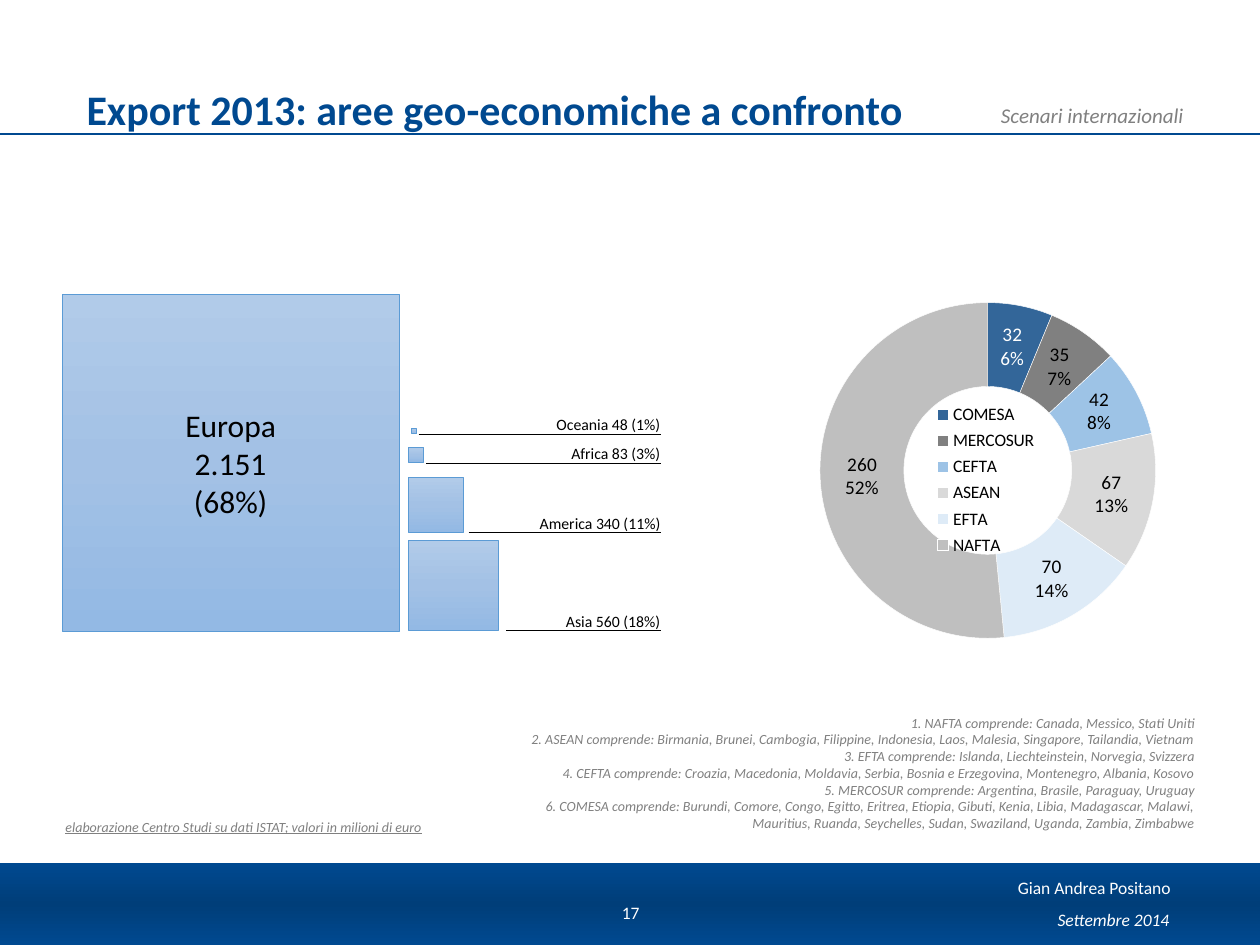
import copy

import lxml.etree
import pptx
import pptx.chart.data
import pptx.dml.color
import pptx.enum.chart
import pptx.enum.dml
import pptx.enum.shapes
import pptx.enum.text
import pptx.oxml.ns
import pptx.util

Cm = pptx.util.Cm
Pt = pptx.util.Pt
RGBColor = pptx.dml.color.RGBColor
qn = pptx.oxml.ns.qn
ALIGN = pptx.enum.text.PP_ALIGN
ANCHOR = pptx.enum.text.MSO_ANCHOR

NAVY = RGBColor(0x00, 0x49, 0x90)
DEEP_NAVY = RGBColor(0x00, 0x3E, 0x79)
GREY = RGBColor(0x80, 0x80, 0x80)
BLACK = RGBColor(0x00, 0x00, 0x00)
WHITE = RGBColor(0xFF, 0xFF, 0xFF)
EDGE_BLUE = RGBColor(0x5B, 0x9B, 0xD5)
SKY = (RGBColor(0xB1, 0xCB, 0xE9), RGBColor(0xA3, 0xC1, 0xE5), RGBColor(0x93, 0xB9, 0xE4))
FOOTER = (NAVY, DEEP_NAVY, NAVY)

ITALIC_NOTE = {"size": Pt(8), "italic": True}
LABEL_MARGINS = {"margin_left": Cm(0.25), "margin_top": Cm(0.13), "margin_right": 0, "margin_bottom": 0}

AREAS = [
    ("Oceania 48 (1%)", 8.3, 8.64, 0.1, 8.44, 8.75),
    ("Africa 83 (3%)", 8.24, 9.02, 0.3, 8.59, 9.33),
    ("America 340 (11%)", 8.24, 9.63, 1.1, 9.45, 10.73),
    ("Asia 560 (18%)", 8.24, 10.9, 1.81, 10.21, 12.71),
]
BLOCS = [
    ("COMESA", 31.5, RGBColor(0x33, 0x66, 0x99)),
    ("MERCOSUR", 34.5, GREY),
    ("CEFTA", 42.4, RGBColor(0x9D, 0xC3, 0xE6)),
    ("ASEAN", 66.5, RGBColor(0xD9, 0xD9, 0xD9)),
    ("EFTA", 69.8, RGBColor(0xDE, 0xEB, 0xF7)),
    ("NAFTA", 260.4, RGBColor(0xBF, 0xBF, 0xBF)),
]
NOTES = [
    "1. NAFTA comprende: Canada, Messico, Stati Uniti",
    "2. ASEAN comprende: Birmania, Brunei, Cambogia, Filippine, Indonesia, Laos, Malesia, Singapore, Tailandia, Vietnam",
    "3. EFTA comprende: Islanda, Liechteinstein, Norvegia, Svizzera",
    "4. CEFTA comprende: Croazia, Macedonia, Moldavia, Serbia, Bosnia e Erzegovina, Montenegro, Albania, Kosovo",
    "5. MERCOSUR comprende: Argentina, Brasile, Paraguay, Uruguay",
    "6. COMESA comprende: Burundi, Comore, Congo, Egitto, Eritrea, Etiopia, Gibuti, Kenia, Libia, Madagascar, Malawi,",
    "Mauritius, Ruanda, Seychelles, Sudan, Swaziland, Uganda, Zambia, Zimbabwe",
]


def apply(target, values):
    """Set each named attribute of the target."""
    for name, value in values.items():
        setattr(target, name, value)


def write(box, lines, color, style, align=ALIGN.LEFT, frame_format=None):
    """Fill a shape with one formatted paragraph per line."""
    frame = box.text_frame
    apply(frame, {"word_wrap": True, **(frame_format or {})})
    for index, line in enumerate(lines):
        para = frame.add_paragraph() if index else frame.paragraphs[0]
        para.alignment = align
        span = para.add_run()
        span.text = line
        apply(span.font, {"name": "Calibri", **style})
        span.font.color.rgb = color


def add_text(page, place, *text_format):
    """Add a text box at a place given in centimetres."""
    box = page.shapes.add_textbox(*map(Cm, place))
    write(box, *text_format)
    return box


def add_block(page, place, colors, angle, edge=None):
    """Add a rectangle with a three-stop gradient."""
    box = page.shapes.add_shape(pptx.enum.shapes.MSO_SHAPE.RECTANGLE, *map(Cm, place))
    box.shadow.inherit = False
    box.fill.gradient()
    box.fill.gradient_angle = angle
    stops = next(box._element.spPr.iter(qn("a:gsLst")))
    stops.insert(1, copy.deepcopy(stops[0]))
    for stop, position, color in zip(box.fill.gradient_stops, (0, 0.5, 1), colors):
        stop.position = position
        stop.color.rgb = color
    if edge is None:
        box.line.fill.background()
    else:
        box.line.color.rgb = edge
        box.line.width = Pt(0.5)
    return box


def add_rule(page, left, right, height, color, line_format):
    """Draw a horizontal line."""
    rule = page.shapes.add_connector(
        pptx.enum.shapes.MSO_CONNECTOR.STRAIGHT, Cm(left), Cm(height), Cm(right), Cm(height))
    rule.line.color.rgb = color
    apply(rule.line, line_format)
    lxml.etree.SubElement(rule._element.spPr, qn("a:effectLst"))


def set_layout(parent, index, bounds, inner=False):
    """Give a chart part a manual layout with fractional bounds."""
    for layout in parent.findall(qn("c:layout")):
        parent.remove(layout)
    layout = lxml.etree.Element(qn("c:layout"))
    manual = lxml.etree.SubElement(layout, qn("c:manualLayout"))
    entries = [("layoutTarget", "inner")] if inner else []
    entries += [("xMode", "edge"), ("yMode", "edge"), *zip("xywh", map(str, bounds))]
    for name, value in entries:
        lxml.etree.SubElement(manual, qn(f"c:{name}")).set("val", value)
    parent.insert(index, layout)


def show_percent(labels):
    """Show the percentage on a new line below the value."""
    labels.find(qn("c:showPercent")).set("val", "1")
    separator = lxml.etree.Element(qn("c:separator"))
    separator.text = "\n"
    labels.find(qn("c:showBubbleSize")).addnext(separator)


def add_doughnut(page):
    """Add the doughnut of trade blocs with its legend in the hole."""
    data = pptx.chart.data.CategoryChartData(number_format="0")
    names, values, colors = zip(*BLOCS)
    data.categories = names
    data.add_series("Series 1", values)
    kind = pptx.enum.chart.XL_CHART_TYPE.DOUGHNUT
    chart = page.shapes.add_chart(kind, *map(Cm, (15.9, 2.92, 7.87, 13.13)), data).chart
    apply(chart, {"has_title": False, "has_legend": True})
    apply(chart.font, {"name": "Calibri", "size": Pt(18)})
    chart.font.color.rgb = BLACK

    legend = chart.legend
    apply(legend, {"position": pptx.enum.chart.XL_LEGEND_POSITION.BOTTOM, "include_in_layout": False})
    legend.font.size = Pt(10)
    set_layout(legend._element, 1, (0.36, 0.39, 0.29, 0.25))

    area = next(chart._chartSpace.iter(qn("c:plotArea")))
    set_layout(area, 0, (0.08, 0.2, 0.86, 0.6), inner=True)
    next(area.iter(qn("c:holeSize"))).set("val", "71")

    plot = chart.plots[0]
    plot.vary_by_categories = True
    series = plot.series[0]
    for index, color in enumerate(colors):
        slice_format = series.points[index].format
        slice_format.fill.solid()
        slice_format.fill.fore_color.rgb = color
        slice_format.line.color.rgb = WHITE
        slice_format.line.width = Pt(0.25)

    labels = series.data_labels
    apply(labels, {"show_value": True, "number_format": "0%", "number_format_is_linked": False})
    for font, color in ((labels.font, BLACK), (series.points[0].data_label.font, WHITE)):
        apply(font, {"name": "Calibri", "size": Pt(11)})
        font.color.rgb = color
    first = labels._element.find(qn("c:dLbl"))
    first.insert(1, copy.deepcopy(labels._element.find(qn("c:numFmt"))))
    show_percent(first)
    show_percent(labels._element)


def add_frame(page):
    """Add the footer bar, header line and running texts."""
    middle = {"vertical_anchor": ANCHOR.MIDDLE}
    small = {"size": Pt(10)}
    add_block(page, (-0.48, 17.4, 26.16, 1.65), FOOTER, 90)
    add_text(page, (19.96, 18.28, 3.86, 0.53), ["Settembre 2014"], WHITE,
             {"size": Pt(10), "italic": True}, ALIGN.RIGHT, middle)
    author = add_text(page, (20.27, 17.61, 3.89, 0.79), ["Gian Andrea Positano"], WHITE, small)
    author.text_frame.paragraphs[0].line_spacing = 0.9
    add_rule(page, -0.43, 25.58, 2.7, NAVY, {"width": Pt(0.75)})
    add_text(page, (15.47, 1.94, 8.64, 0.76), ["Scenari internazionali"], GREY,
             {"size": Pt(12), "italic": True}, ALIGN.RIGHT)
    add_text(page, (11.99, 17.88, 1.45, 1.02), ["17"], WHITE, small, ALIGN.CENTER, middle)


def add_title(page):
    """Place and fill the title placeholder."""
    title = page.shapes.title
    apply(title, dict(zip(("left", "top", "width", "height"), map(Cm, (1.49, 1.55, 20.29, 1.27)))))
    write(title, ["Export 2013: aree geo-economiche a confronto"], NAVY, {"size": Pt(24), "bold": True},
          ALIGN.LEFT, {"vertical_anchor": ANCHOR.BOTTOM, "margin_top": Cm(0.05), "margin_bottom": Cm(0.12),
                       "auto_size": pptx.enum.text.MSO_AUTO_SIZE.NONE})


def add_areas(page):
    """Add the squares of the continents and their labels."""
    europe = add_block(page, (1.25, 5.93, 6.8, 6.8), SKY, 270, EDGE_BLUE)
    write(europe, ["Europa", "2.151", "(68%)"], BLACK, {"size": Pt(18)}, ALIGN.CENTER,
          {"vertical_anchor": ANCHOR.MIDDLE})
    dotted = {"width": Pt(0.25), "dash_style": pptx.enum.dml.MSO_LINE.ROUND_DOT}
    for name, left, top, side, start, base in AREAS:
        add_block(page, (left, top, side, side), SKY, 270, EDGE_BLUE)
        add_rule(page, start, 13.31, base, BLACK, dotted)
        add_text(page, (9.83, base - 0.51, 3.48, 0.51), [name], BLACK, {"size": Pt(9)},
                 ALIGN.RIGHT, LABEL_MARGINS)


def main():
    """Build and save the slide."""
    deck = pptx.Presentation()
    apply(deck, {"slide_width": Cm(25.4), "slide_height": Cm(19.05)})
    page = deck.slides.add_slide(deck.slide_layouts[5])
    add_frame(page)
    add_title(page)
    add_text(page, (1.07, 16.37, 8.64, 0.61),
             ["elaborazione Centro Studi su dati ISTAT; valori in milioni di euro"],
             GREY, {**ITALIC_NOTE, "underline": True})
    add_areas(page)
    add_doughnut(page)
    add_text(page, (10.35, 14.27, 14, 2.64), NOTES, GREY, ITALIC_NOTE, ALIGN.RIGHT)
    deck.save("out.pptx")


if __name__ == "__main__":
    main()
